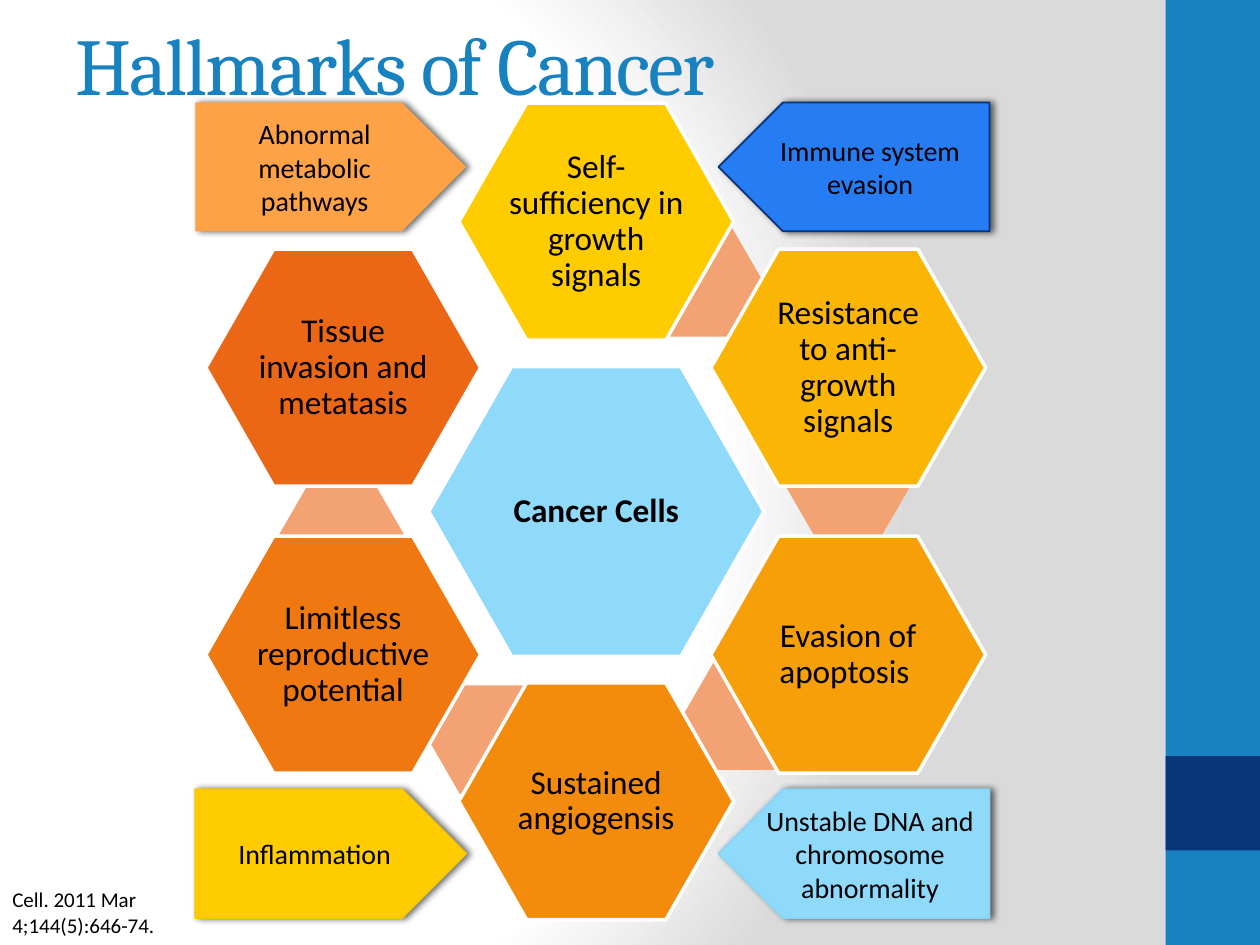
from lxml.etree import SubElement
from pptx import Presentation
from pptx.dml.color import RGBColor
from pptx.enum.shapes import MSO_SHAPE
from pptx.enum.text import MSO_ANCHOR, MSO_AUTO_SIZE, PP_ALIGN
from pptx.oxml import parse_xml
from pptx.oxml.ns import nsdecls, qn
from pptx.util import Pt

COLORS = {
    "white": "FFFFFF", "gray": "DADADA", "black": "000000",
    "blue": "1782BF", "navy": "073779", "sky": "8FD9FB", "sky_edge": "89D5F8",
    "royal": "267CF2", "royal_edge": "043579", "link": "F3A373",
    "peach": "FDA247", "yellow": "FFCC00", "yellow_edge": "F9C800",
    "gold": "FBB504", "amber": "F79F08", "orange": "F38B0D",
    "tangerine": "EF7811", "rust": "EB6615",
}


class HallmarksSlide:
    """Hold the slide and its style, with one method per kind of element."""

    def __init__(self, deck):
        self.body_font, self.title_font = "Calibri", "Cambria"
        self.slide = deck.slides.add_slide(deck.slide_layouts[6])

    def color(self, name):
        return RGBColor.from_string(COLORS[name])

    def background(self):
        self.slide.background.fill.solid()
        properties = self.slide.element.find(".//" + qn("p:bgPr"))
        stops = "".join(
            f'<a:gs pos="{percent * 1000}"><a:srgbClr val="{COLORS[name]}"/></a:gs>'
            for percent, name in ((0, "white"), (75, "white"), (100, "gray")))
        properties[0] = parse_xml(
            f'<a:gradFill {nsdecls("a")} rotWithShape="1"><a:gsLst>{stops}</a:gsLst>'
            '<a:path path="circle"><a:fillToRect l="20000" t="50000" r="100000" b="50000"/>'
            '</a:path></a:gradFill>')

    def block(self, kind, left, top, width, height, fill, edge=None, edge_width=1):
        shape = self.slide.shapes.add_shape(kind, Pt(left), Pt(top), Pt(width), Pt(height))
        shape.shadow.inherit = False
        shape.fill.solid()
        shape.fill.fore_color.rgb = self.color(fill)
        if edge:
            shape.line.color.rgb = self.color(edge)
            shape.line.width = Pt(edge_width)
        else:
            shape.line.fill.background()
        return shape

    def set_text(self, shape, text, size, font=None, color="black", bold=False,
                 align=PP_ALIGN.CENTER, anchor=MSO_ANCHOR.MIDDLE):
        frame = shape.text_frame
        frame.text = text
        frame.word_wrap = True
        frame.vertical_anchor = anchor
        paragraph = frame.paragraphs[0]
        paragraph.alignment = align
        run = paragraph.runs[0]
        run.font.name = font or self.body_font
        run.font.size = Pt(size)
        run.font.bold = bold
        run.font.color.rgb = self.color(color)
        return run

    def text_box(self, left, top, width, height):
        return self.slide.shapes.add_textbox(Pt(left), Pt(top), Pt(width), Pt(height))

    def hexagon(self, left, top, width, height, text, fill, bold=False):
        cell = self.block(MSO_SHAPE.HEXAGON, left, top, width, height, fill, "white", 2)
        cell.adjustments[0] = 0.286
        label = self.text_box(left + width / 6, top + height / 6, width * 2 / 3, height * 2 / 3)
        self.set_text(label, text, 19, bold=bold)
        frame = label.text_frame
        frame.margin_left = frame.margin_right = Pt(2)
        frame.margin_top = frame.margin_bottom = Pt(2)
        frame.paragraphs[0].line_spacing = 0.9

    def link(self, left, top):
        piece = self.block(MSO_SHAPE.HEXAGON, left, top, 72, 62, "link")
        piece.adjustments[0] = 0.289

    def pentagon(self, left, top, text, fill, edge, flipped):
        tag = self.block(MSO_SHAPE.PENTAGON, left, top, 154.8, 73.6, fill, edge)
        if flipped:
            tag.element.spPr.xfrm.set("flipH", "1")
        effects = tag.element.spPr.find(qn("a:effectLst"))
        shadow = SubElement(effects, qn("a:outerShdw"), blurRad=str(Pt(4)),
                            dist=str(Pt(2)), dir="0", rotWithShape="0")
        tint = SubElement(shadow, qn("a:srgbClr"), val=COLORS["black"])
        SubElement(tint, qn("a:alpha"), val="60000")
        self.set_text(tag, text, 16)

    def citation(self, text):
        box = self.text_box(0, 503.3, 144, 36)
        self.set_text(box, text, 12, align=PP_ALIGN.LEFT, anchor=MSO_ANCHOR.TOP)
        box.text_frame.auto_size = MSO_AUTO_SIZE.SHAPE_TO_FIT_TEXT

    def title(self, text):
        run = self.set_text(self.text_box(36, -8.6, 600, 90), text, 46,
                            self.title_font, "blue", align=PP_ALIGN.LEFT)
        run._r.get_or_add_rPr().set("spc", "-100")


def main():
    deck = Presentation()
    deck.slide_width, deck.slide_height = Pt(720), Pt(540)
    page = HallmarksSlide(deck)
    page.background()
    page.block(MSO_SHAPE.RECTANGLE, 666, 0, 54, 540, "blue")
    page.block(MSO_SHAPE.RECTANGLE, 666, 432, 54, 54, "navy")

    page.hexagon(245, 209.5, 191.5, 165.6, "Cancer Cells", "sky", bold=True)
    west, middle, east = 117.6, 262.2, 406.2
    hallmarks = (
        ((364.4, 130.4), middle, 59, "Self-sufficiency in growth signals", "yellow"),
        ((448.6, 246.2), east, 142.4, "Resistance to anti-growth signals", "gold"),
        ((390.2, 378), east, 306.4, "Evasion of apoptosis ", "amber"),
        ((244.8, 391.6), middle, 390.2, "Sustained angiogensis", "orange"),
        ((159.2, 275), west, 306.4, "Limitless reproductive potential", "tangerine"),
        (None, west, 142.4, "Tissue invasion and metatasis", "rust"),
    )
    for link_corner, left, top, text, fill in hallmarks:
        if link_corner:
            page.link(*link_corner)
        page.hexagon(left, top, 157, 135.4, text, fill)

    enablers = (
        ("Abnormal metabolic pathways", "peach", None),
        ("Immune system evasion", "royal", "royal_edge"),
        ("Inflammation", "yellow", "yellow_edge"),
        ("Unstable DNA and chromosome abnormality", "sky", "sky_edge"),
    )
    for index, (text, fill, edge) in enumerate(enablers):
        row, column = divmod(index, 2)
        page.pentagon(111.6 + column * 299, 58.6 + row * 392.4, text, fill, edge, column == 1)

    page.citation("Cell. 2011 Mar 4;144(5):646-74.")
    page.title("Hallmarks of Cancer")
    deck.save("out.pptx")


if __name__ == "__main__":
    main()
